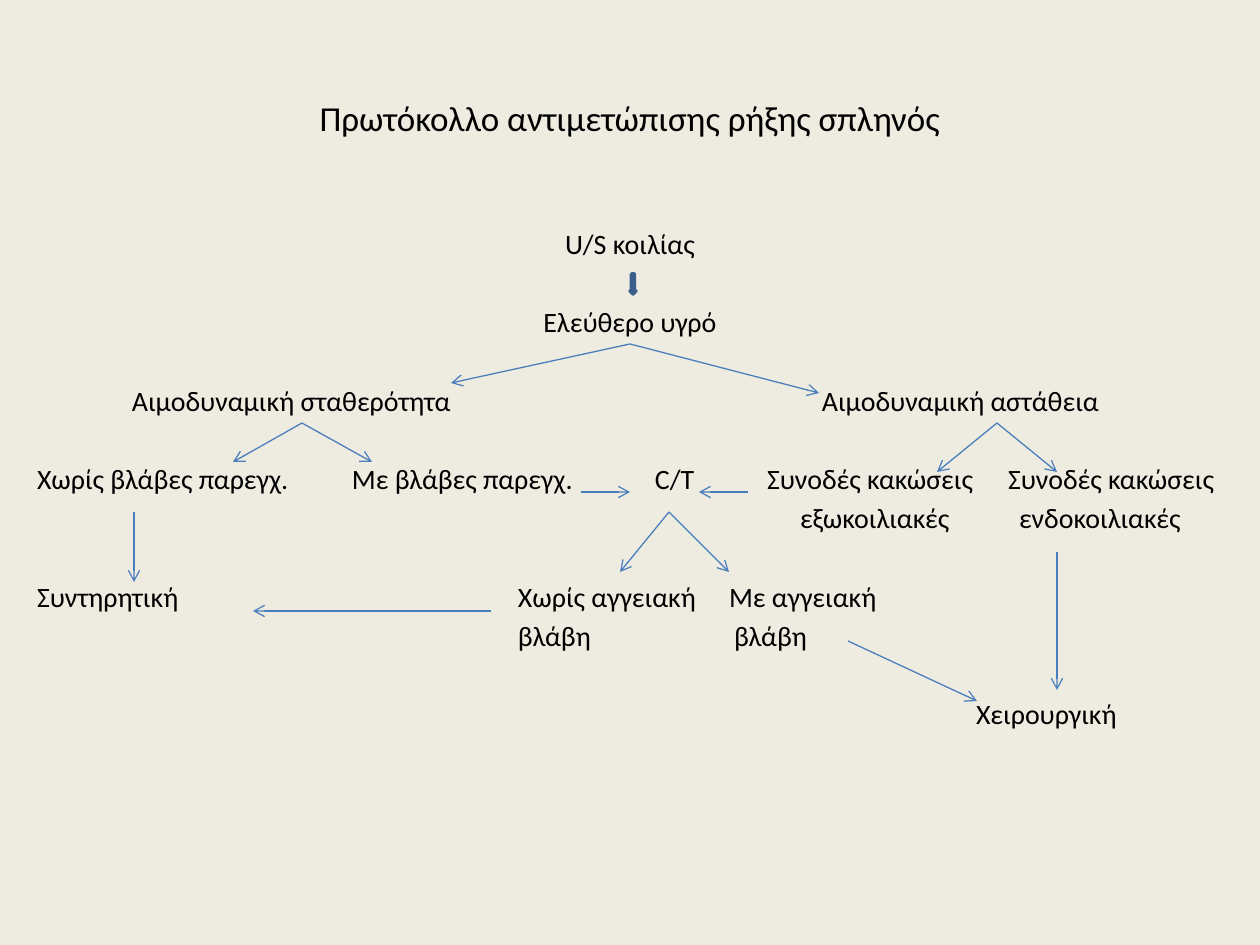
import dataclasses
import typing

import lxml.etree
import pptx
import pptx.dml.color
import pptx.enum.shapes
import pptx.enum.text
import pptx.oxml.ns
import pptx.util

PX_PER_INCH = 126
ROW_TOP, ROW_PITCH, ROW_HEIGHT = 227, 39.2, 39
BLACK, LINE_BLUE = "000000", "4B7EBC"
LEFT, CENTER = pptx.enum.text.PP_ALIGN.LEFT, pptx.enum.text.PP_ALIGN.CENTER


@dataclasses.dataclass(frozen=True)
class Label:
    """A text on the row grid; second_left is the left edge of its second line."""

    left: int
    row: int
    width: int
    lines: tuple[str, ...]
    align: typing.Any = LEFT
    second_left: int = 0


@dataclasses.dataclass(frozen=True)
class Arrow:
    """An arrow that may start at the bottom middle of a label."""

    start: tuple[int, int]
    end: tuple[int, int]
    source: str = ""


LABELS = {
    "ultrasound": Label(530, 0, 200, ("U/S κοιλίας",), CENTER),
    "free fluid": Label(530, 2, 200, ("Ελεύθερο υγρό",), CENTER),
    "stable": Label(132, 4, 340, ("Αιμοδυναμική σταθερότητα",)),
    "unstable": Label(822, 4, 350, ("Αιμοδυναμική αστάθεια",)),
    "no lesions": Label(37, 6, 270, ("Χωρίς βλάβες παρεγχ.",)),
    "lesions": Label(352, 6, 240, ("Με βλάβες παρεγχ.",)),
    "scan": Label(655, 6, 50, ("C/T",)),
    "outside abdomen": Label(767, 6, 230, ("Συνοδές κακώσεις", "εξωκοιλιακές"), second_left=800),
    "inside abdomen": Label(1008, 6, 230, ("Συνοδές κακώσεις", "ενδοκοιλιακές"), second_left=1019),
    "conservative": Label(37, 9, 180, ("Συντηρητική",)),
    "no vascular": Label(518, 9, 200, ("Χωρίς αγγειακή", "βλάβη"), second_left=518),
    "vascular": Label(729, 9, 180, ("Με αγγειακή", "βλάβη"), second_left=734),
    "surgical": Label(976, 12, 180, ("Χειρουργική",)),
}

ARROWS = [
    Arrow((630, 344), (451, 383), "free fluid"),
    Arrow((630, 344), (819, 393), "free fluid"),
    Arrow((302, 423), (233, 462), "stable"),
    Arrow((302, 423), (372, 462), "stable"),
    Arrow((997, 423), (937, 472), "unstable"),
    Arrow((997, 423), (1057, 472), "unstable"),
    Arrow((581, 492), (630, 492)),
    Arrow((748, 492), (699, 492)),
    Arrow((669, 512), (620, 572)),
    Arrow((669, 512), (729, 572)),
    Arrow((134, 512), (134, 582)),
    Arrow((491, 611), (253, 611)),
    Arrow((848, 641), (977, 701)),
    Arrow((1057, 552), (1057, 690)),
]


def px(value: int) -> int:
    """Turn slide pixels into EMU."""
    return round(value * 914400 / PX_PER_INCH)


def color(value: str) -> pptx.dml.color.RGBColor:
    """Turn a hex string into a colour."""
    return pptx.dml.color.RGBColor.from_string(value)


def add_text(slide, lines: tuple[str, ...], left: int, top: int, width: int, height: int, *,
             size: int = 16, align=LEFT, anchor=pptx.enum.text.MSO_ANCHOR.TOP,
             second_indent: int = 0):
    """Add a text box without margins, one paragraph per line."""
    shape = slide.shapes.add_textbox(px(left), px(top), px(width), px(height))
    frame = shape.text_frame
    frame.word_wrap = True
    frame.vertical_anchor = anchor
    frame.margin_left = frame.margin_right = frame.margin_top = frame.margin_bottom = 0
    for index, line in enumerate(lines):
        paragraph = frame.add_paragraph() if index else frame.paragraphs[0]
        paragraph.alignment = align
        if index:
            paragraph.space_before = pptx.util.Pt(3)
            paragraph._p.get_or_add_pPr().set("marL", str(px(second_indent)))
        run = paragraph.add_run()
        run.text = line
        run.font.name = "Calibri"
        run.font.size = pptx.util.Pt(size)
        run.font.color.rgb = color(BLACK)
    return shape


def add_label(slide, label: Label):
    """Add a label on its row."""
    top = ROW_TOP + round(label.row * ROW_PITCH)
    return add_text(slide, label.lines, label.left, top, label.width,
                    ROW_HEIGHT * len(label.lines), align=label.align,
                    second_indent=label.second_left - label.left)


def add_arrow(slide, arrow: Arrow, boxes: dict) -> None:
    """Add a thin line with an open arrowhead at its end."""
    connector = slide.shapes.add_connector(
        pptx.enum.shapes.MSO_CONNECTOR.STRAIGHT, *map(px, arrow.start + arrow.end))
    if arrow.source:
        connector.begin_connect(boxes[arrow.source], 2)
    connector.line.color.rgb = color(LINE_BLUE)
    connector.line.width = pptx.util.Pt(0.75)
    tail = lxml.etree.SubElement(connector.line._get_or_add_ln(), pptx.oxml.ns.qn("a:tailEnd"))
    tail.set("type", "arrow")
    lxml.etree.SubElement(connector._element.spPr, pptx.oxml.ns.qn("a:effectLst"))


def add_block_arrow(slide) -> None:
    """Add the small block arrow below the ultrasound label."""
    shape = slide.shapes.add_shape(
        pptx.enum.shapes.MSO_SHAPE.DOWN_ARROW, px(630), px(274), px(6), px(20))
    shape.shadow.inherit = False
    shape.fill.solid()
    shape.fill.fore_color.rgb = color("4F81BD")
    shape.line.color.rgb = color("3A5F8C")
    shape.line.width = pptx.util.Pt(2)


def main() -> None:
    """Build the treatment protocol slide."""
    presentation = pptx.Presentation()
    presentation.slide_width, presentation.slide_height = px(1260), px(945)
    slide = presentation.slides.add_slide(presentation.slide_layouts[6])
    slide.background.fill.solid()
    slide.background.fill.fore_color.rgb = color("EEECE1")
    add_text(slide, ("Πρωτόκολλο αντιμετώπισης ρήξης σπληνός",), 63, 38, 1134, 158,
             size=20, align=CENTER, anchor=pptx.enum.text.MSO_ANCHOR.MIDDLE)
    boxes = {name: add_label(slide, label) for name, label in LABELS.items()}
    add_block_arrow(slide)
    for arrow in ARROWS:
        add_arrow(slide, arrow, boxes)
    presentation.save("out.pptx")


if __name__ == "__main__":
    main()
